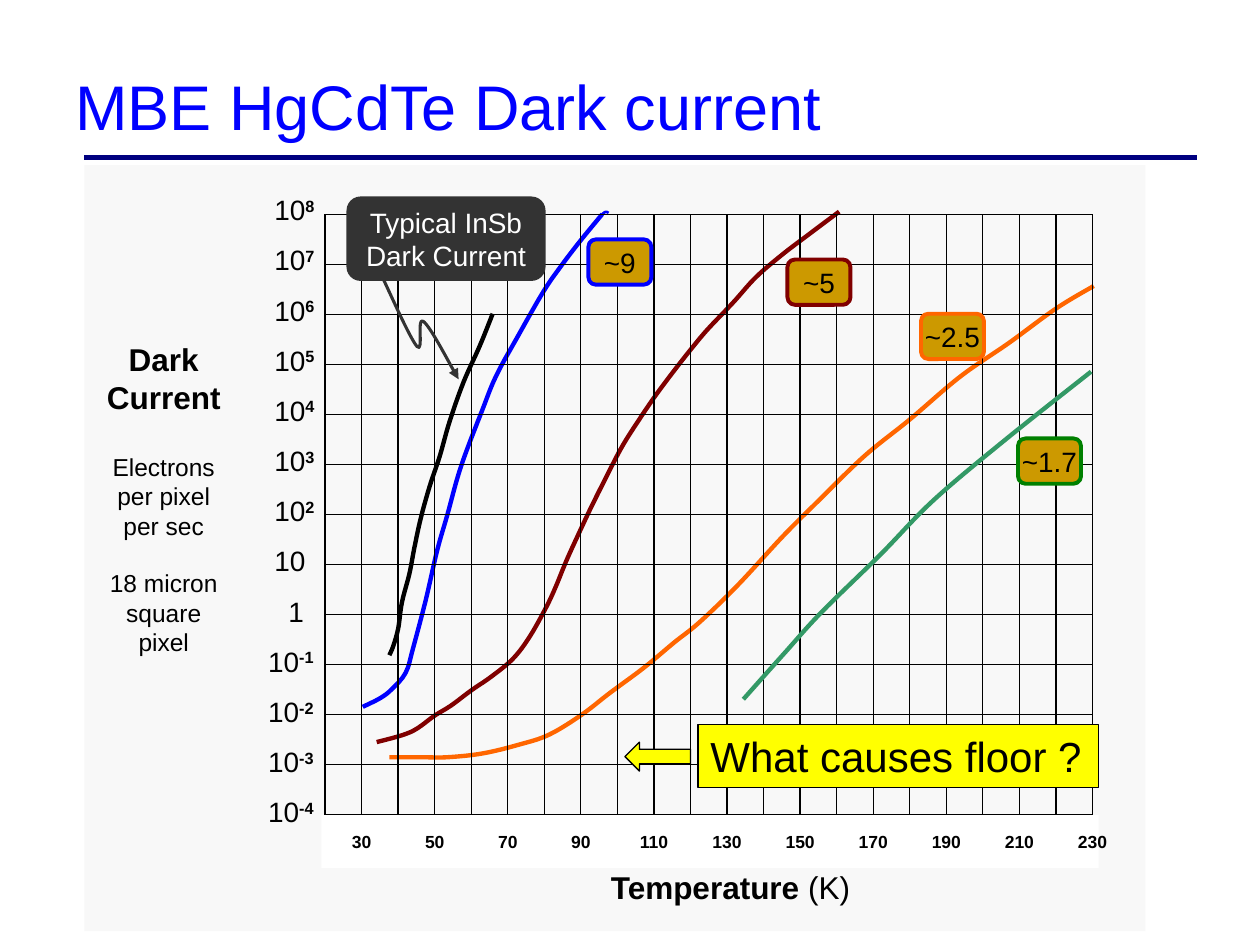
"""Build the dark current slide on a grid of 1000 columns by 750 rows."""
from dataclasses import dataclass

from pptx import Presentation
from pptx import util as u
from pptx.dml.color import RGBColor
from pptx.enum import shapes, text
from pptx.oxml import ns, xmlchemy


@dataclass(frozen=True)
class Theme:
    font: str = "Arial"
    black: str = "000000"
    white: str = "FFFFFF"
    panel: str = "F8F8F8"
    rule: str = "000080"
    blue: str = "0000FF"
    maroon: str = "800000"
    orange: str = "FF6600"
    green: str = "339966"
    badge_green: str = "008000"
    gold: str = "CC9900"
    dark: str = "333333"
    yellow: str = "FFFF00"
    title: int = 36
    question: int = 24
    heading: int = 18
    label: int = 16
    note: int = 14
    tick: int = 10


T = Theme()
COLS, ROWS = 1000, 750
WIDTH, HEIGHT = u.Inches(10), u.Inches(7.5)
PLOT = dict(left=258, top=170, dx=29, dy=39.7, cols=21, rows=12, drop=686)
DECADE_TOP, DECADE_STEP = 148, 39.83
TICK_WIDTH = 45

TITLE = "MBE HgCdTe Dark current"
QUESTION = "What causes floor ?"
BLUE = [(478, 170), (460, 192), (444, 213), (431, 232), (411, 267), (394, 298),
        (383, 325), (366, 370), (355, 409), (347, 437), (338, 476), (328, 514),
        (322, 534), (311, 547), (302, 554), (288, 561)]
MAROON = [(666, 168), (642, 186), (621, 202), (600, 220), (582, 240), (562, 261),
          (551, 274), (536, 293), (521, 313), (508, 332), (494, 354), (481, 379),
          (469, 403), (461, 420), (450, 444), (441, 466), (433, 483), (420, 506),
          (407, 523), (390, 537), (374, 548), (358, 560), (345, 568), (326, 581),
          (299, 589)]
ORANGE = [(868, 227), (838, 245), (801, 272), (762, 299), (722, 333), (686, 362),
          (649, 398), (621, 426), (585, 465), (555, 494), (535, 510), (511, 530),
          (484, 550), (462, 567), (436, 583), (412, 591), (383, 598), (355, 601),
          (335, 601), (309, 601)]
INSB = [(391, 249), (381, 274), (368, 303), (357, 334), (349, 362), (341, 386),
        (334, 411), (329, 434), (325, 455), (319, 478), (316, 499), (312, 513),
        (309, 520)]
GREEN = [(866, 295), (798, 349), (741, 397), (699, 440), (652, 486), (623, 518),
         (590, 555)]
POINTER = [(303, 219), (331, 275), (336, 255), (364, 301)]
BADGES = [("~9", 467, 190, T.blue), ("~5", 625, 206, T.maroon),
          ("~2.5", 731, 249, T.orange), ("~1.7", 808, 348, T.badge_green)]
DECADES = range(8, -5, -1)
TEMPERATURES = range(30, 231, 20)
AXIS_NOTE = [("Dark", T.heading, 0), ("Current", T.heading, 0),
             ("Electrons", T.note, 20.7), ("per pixel", T.note, 0),
             ("per sec", T.note, 0), ("18 micron", T.note, 16.1),
             ("square", T.note, 0), ("pixel", T.note, 0)]

prs = Presentation()
prs.slide_width, prs.slide_height = WIDTH, HEIGHT
s = prs.slides.add_slide(prs.slide_layouts[6])


def x(col):
    return round(col * WIDTH / COLS)


def y(row):
    return round(row * HEIGHT / ROWS)


def rgb(color):
    return RGBColor.from_string(color)


def set_line(sp, color, width):
    sp.line.color.rgb = rgb(color)
    sp.line.width = u.Pt(width)


def write(tf, paragraphs, size, color=T.black, bold=False, center=False, wrap=False):
    """Fill a frame with paragraphs given as lists of runs."""
    tf.word_wrap = wrap
    for i, runs in enumerate(paragraphs):
        p = tf.add_paragraph() if i else tf.paragraphs[0]
        p.alignment = text.PP_ALIGN.CENTER if center else text.PP_ALIGN.LEFT
        p.font.name, p.font.size, p.font.bold = T.font, u.Pt(size), bold
        p.font.color.rgb = rgb(color)
        for content in runs:
            p.add_run().text = content
    return tf


def label(at, paragraphs, size, **style):
    left, top, width, height = at
    sp = s.shapes.add_textbox(x(left), y(top), x(width), y(height))
    tf = write(sp.text_frame, paragraphs, size, **style)
    if not tf.word_wrap:
        tf.auto_size = text.MSO_AUTO_SIZE.SHAPE_TO_FIT_TEXT
    return tf


def box(kind, at, fill, line=None, width=0.75):
    left, top, w, h = at
    sp = s.shapes.add_shape(kind, x(left), y(top), x(w), y(h))
    sp.shadow.inherit = False
    sp.fill.solid()
    sp.fill.fore_color.rgb = rgb(fill)
    if line:
        set_line(sp, line, width)
    else:
        sp.line.fill.background()
    return sp


def tag(at, lines, fill, color, line=None):
    sp = box(shapes.MSO_SHAPE.ROUNDED_RECTANGLE, at, fill, line, 2.25)
    tf = write(sp.text_frame, [[t] for t in lines], T.label, color, center=True)
    tf.margin_left = tf.margin_right = tf.margin_top = tf.margin_bottom = 0
    tf.vertical_anchor = text.MSO_ANCHOR.MIDDLE


def rule(x1, y1, x2, y2, color=T.black, width=0.75):
    sp = s.shapes.add_connector(shapes.MSO_CONNECTOR.STRAIGHT, x(x1), y(y1), x(x2), y(y2))
    set_line(sp, color, width)
    sp._element.spPr.append(xmlchemy.OxmlElement("a:effectLst"))


def curve(points, color, width=2.5, arrow=False):
    """Draw a smooth open outline whose tangents follow the neighbouring points."""
    (x0, y0), *rest = [(x(a), y(b)) for a, b in points]
    fb = s.shapes.build_freeform(x0, y0, 1.0)
    fb.add_line_segments(rest, close=False)
    sp = fb.convert_to_shape()
    sp.shadow.inherit = False
    sp.fill.background()
    set_line(sp, color, width)
    knots = [(int(e.get("x")), int(e.get("y"))) for e in sp._element.iter(ns.qn("a:pt"))]
    knots = [knots[0], *knots, knots[-1]]
    for i, step in enumerate(list(sp._element.iter(ns.qn("a:lnTo")))):
        a, b, c, d = knots[i:i + 4]
        lead = [b[k] + (c[k] - a[k]) / 6 for k in (0, 1)]
        trail = [c[k] - (d[k] - b[k]) / 6 for k in (0, 1)]
        bezier = xmlchemy.OxmlElement("a:cubicBezTo")
        for px, py in (lead, trail, c):
            pt = xmlchemy.OxmlElement("a:pt")
            pt.set("x", str(round(px)))
            pt.set("y", str(round(py)))
            bezier.append(pt)
        step.getparent().replace(step, bezier)
    if arrow:
        tail = xmlchemy.OxmlElement("a:tailEnd")
        tail.set("type", "triangle")
        sp.line._get_or_add_ln().append(tail)


rule(67, 125, 950, 125, T.rule, 2.5)
title = label((50, 42, 908, 83), [[TITLE]], T.title, color=T.blue, wrap=True)
title.vertical_anchor = text.MSO_ANCHOR.MIDDLE
box(shapes.MSO_SHAPE.RECTANGLE, (67, 131, 842, 608), T.panel)
for points, color, width in (([(483, 169), *BLUE], T.blue, 1.5), (MAROON, T.maroon, 2.5),
                             (ORANGE, T.orange, 2.5), (BLUE, T.blue, 2.5)):
    curve(points, color, width)

right = PLOT["left"] + PLOT["cols"] * PLOT["dx"]
for i in range(PLOT["rows"] + 1):
    row = PLOT["top"] + i * PLOT["dy"]
    rule(PLOT["left"], row, right, row)
for i in range(PLOT["cols"] + 1):
    col = PLOT["left"] + i * PLOT["dx"]
    rule(col, PLOT["top"], col, PLOT["drop"])
curve(INSB, T.black)
for name, left, top, color in BADGES:
    tag((left, top, 50, 36), [name], T.gold, T.black, color)
tag((275, 156, 158, 67), ["Typical InSb", "Dark Current"], T.dark, T.white)

for i, power in enumerate(DECADES):
    left, width = {0: (219, 32), 1: (208, 45)}.get(power, (208, 53) if power > 0 else (203, 58))
    runs = {0: ["1"], 1: ["10"]}.get(power, ["10", str(power)])
    tf = label((left, DECADE_TOP + i * DECADE_STEP, width, 37), [runs], T.label)
    for r in tf.paragraphs[0].runs[1:]:
        r.font.bold = True
        r._r.get_or_add_rPr().set("baseline", "30000")
box(shapes.MSO_SHAPE.RECTANGLE, (255, 647, 617, 42), T.white)
for i, kelvin in enumerate(TEMPERATURES):
    left = PLOT["left"] + (2 * i + 1) * PLOT["dx"] - TICK_WIDTH / 2
    label((left, 655, TICK_WIDTH, 27), [[str(kelvin)]], T.tick, bold=True, center=True)

tf = label((475, 684, 212, 40), [["Temperature", " (K)"]], T.heading)
tf.paragraphs[0].runs[0].font.bold = True
tf = label((75, 265, 110, 263), [[t] for t, _, _ in AXIS_NOTE], T.note, center=True)
for p, (_, size, gap) in zip(tf.paragraphs, AXIS_NOTE):
    p.font.size, p.font.bold = u.Pt(size), size == T.heading
    p.space_before = u.Pt(gap)
curve(POINTER, T.dark, 1.75, arrow=True)
curve(GREEN, T.green)
sp = box(shapes.MSO_SHAPE.RECTANGLE, (554, 575, 318, 50), T.yellow, T.black)
write(sp.text_frame, [[QUESTION]], T.question, wrap=True)
box(shapes.MSO_SHAPE.LEFT_ARROW, (496, 589, 52, 23), T.yellow, T.black)
prs.save("out.pptx")
